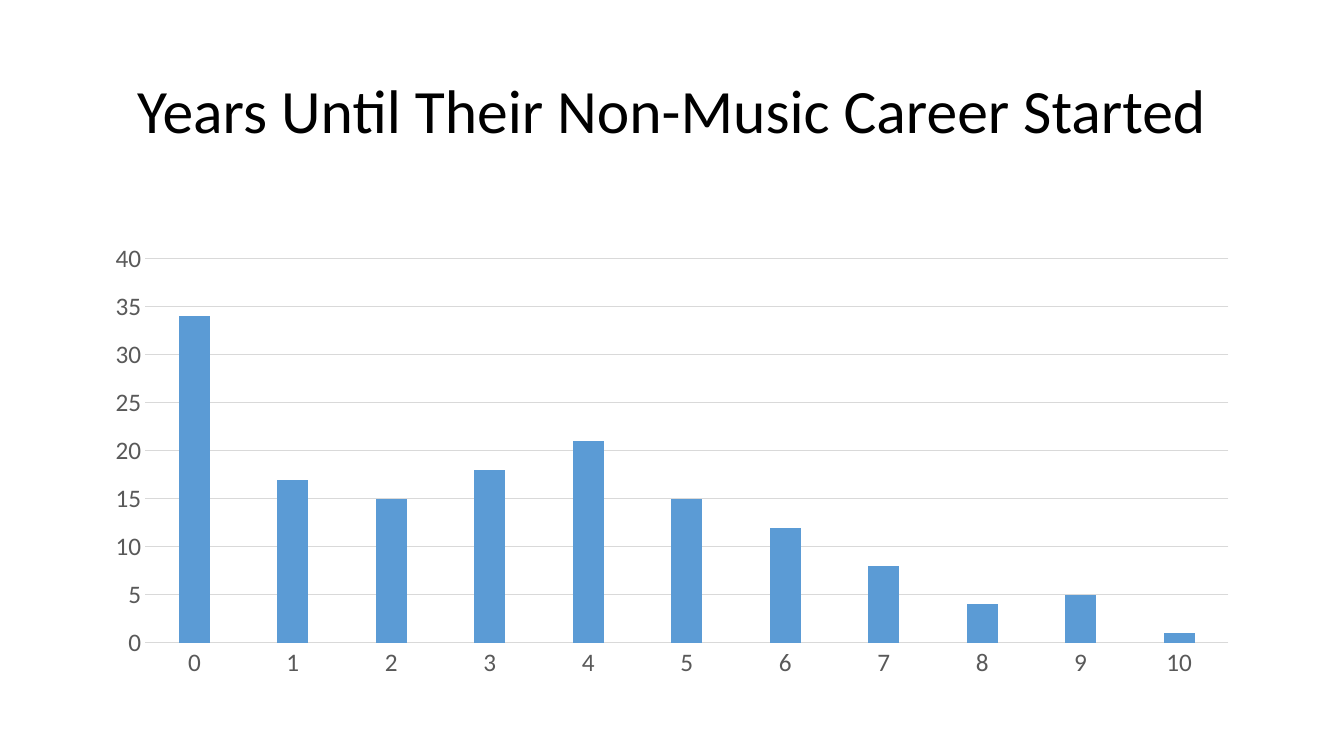
from pptx import Presentation
from pptx.chart import data
from pptx.dml import color
from pptx.enum import chart as kinds, text
from pptx.util import Cm, Pt

FACE = "Calibri"
YEARS = range(11)
COUNTS = (34, 17, 15, 18, 21, 15, 12, 8, 4, 5, 1)
LEFT, WIDTH = Cm(2.33), Cm(29.21)


def paint(form, tone):
    form.rgb = color.RGBColor.from_string(tone)


def style(font, size, tone):
    for key, value in {"name": FACE, "size": Pt(size), "bold": False}.items():
        setattr(font, key, value)
    paint(font.color, tone)


def rule(line):
    """Draw a thin grey axis or grid line."""
    line.width = Pt(0.75)
    paint(line.color, "D9D9D9")


def place(shape, top, height):
    box = {"left": LEFT, "top": top, "width": WIDTH, "height": height}
    for key, value in box.items():
        setattr(shape, key, value)


def add_title(slide, words):
    title = slide.shapes.title
    place(title, Cm(1.01), Cm(3.68))
    frame = title.text_frame
    frame.text = words
    frame.word_wrap = True
    frame.vertical_anchor = text.MSO_ANCHOR.MIDDLE
    para = frame.paragraphs[0]
    para.alignment = text.PP_ALIGN.CENTER
    para.line_spacing = 0.9
    style(para.runs[0].font, 44, "000000")


def add_bars(slide):
    table = data.CategoryChartData()
    table.categories = [str(year) for year in YEARS]
    table.add_series("Series 1", COUNTS)
    chart = slide.shapes.add_chart(
        kinds.XL_CHART_TYPE.COLUMN_CLUSTERED,
        LEFT, Cm(5.9), WIDTH, Cm(11.4), table).chart
    chart.has_legend = chart.has_title = False
    style(chart.font, 10, "000000")

    plot = chart.plots[0]
    form = {"gap_width": 219, "overlap": -27, "vary_by_categories": False}
    for key, value in form.items():
        setattr(plot, key, value)
    fill = plot.series[0].format.fill
    fill.solid()
    paint(fill.fore_color, "5B9BD5")

    base, scale = chart.category_axis, chart.value_axis
    for axis in (base, scale):
        axis.major_tick_mark = axis.minor_tick_mark = kinds.XL_TICK_MARK.NONE
        style(axis.tick_labels.font, 18, "595959")
    rule(base.format.line)
    scale.format.line.fill.background()
    limits = {"minimum_scale": 0, "maximum_scale": 40, "major_unit": 5}
    for key, value in limits.items():
        setattr(scale, key, value)
    rule(scale.major_gridlines.format.line)


def main():
    deck = Presentation()
    deck.slide_width, deck.slide_height = Cm(33.87), Cm(19.05)
    slide = deck.slides.add_slide(deck.slide_layouts[5])
    add_title(slide, "Years Until Their Non-Music Career Started")
    add_bars(slide)
    deck.save("out.pptx")


if __name__ == "__main__":
    main()
